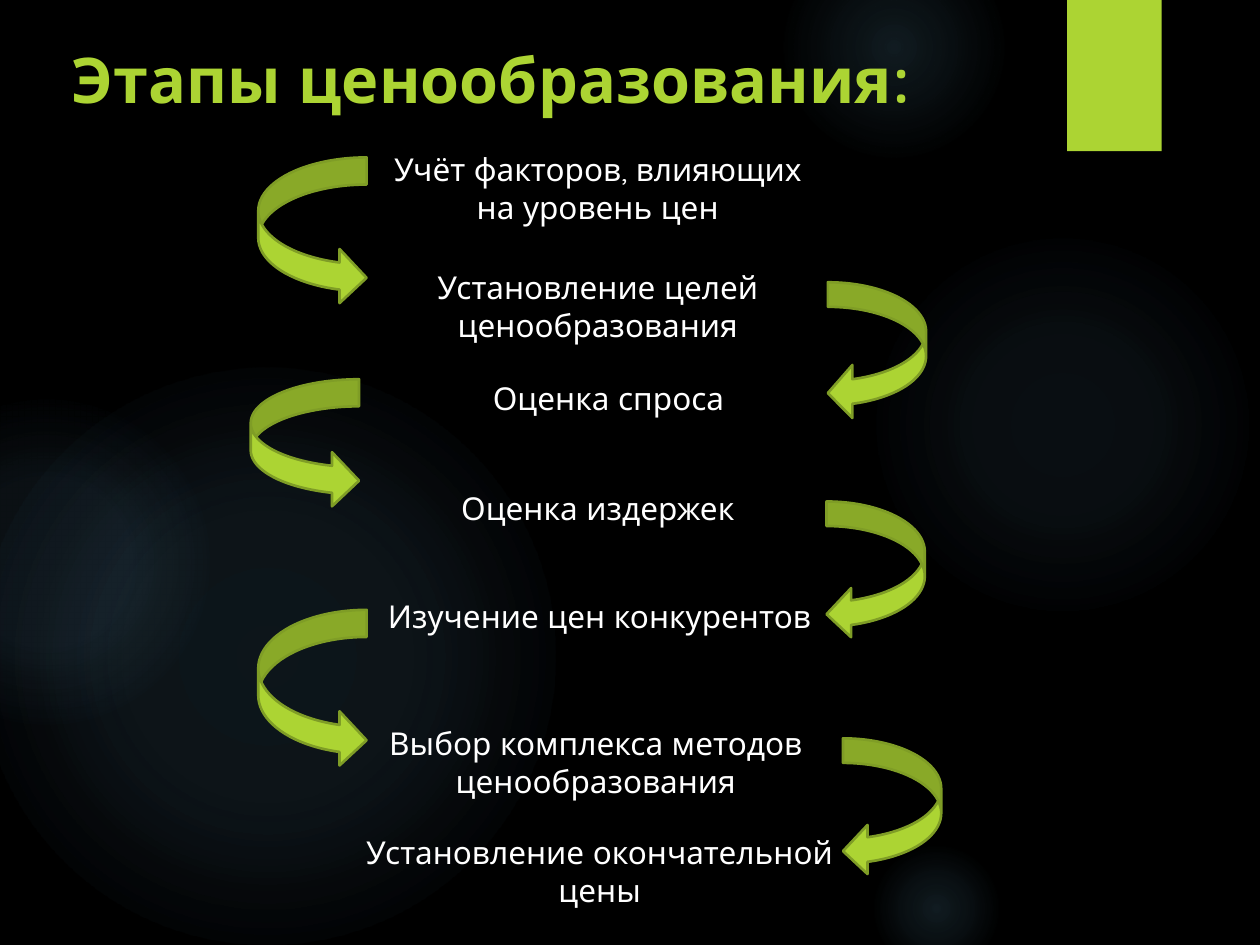
from lxml import etree
from pptx import Presentation
from pptx.dml.color import RGBColor
from pptx.enum.shapes import MSO_SHAPE as Shape
from pptx.enum.text import MSO_ANCHOR as Anchor, MSO_AUTO_SIZE as AutoSize, PP_ALIGN as Align
from pptx.oxml import parse_xml
from pptx.oxml.ns import nsdecls, qn
from pptx.util import Inches, Pt

COLORS = {"back": "000000", "lime": "ACD433", "edge": "7F9D26", "text": "FFFFFF", "glow": "7AC4F0"}
FONT = "Quicksand"

GLOWS = [
    (6.89, 1.83, 3.08, ((0, 7), (36, 6), (69, 0))),
    (6.22, -0.5, 1.75, ((0, 14), (36, 7), (73, 0))),
    (6.89, 6.67, 1.08, ((0, 14), (36, 7), (66, 0))),
    (-0.17, 2.92, 4.58, ((0, 11), (36, 10), (75, 0))),
    (-0.92, 3.17, 2.58, ((0, 8), (36, 8), (72, 0))),
]
STEPS = [
    ("Учёт факторов, влияющих на уровень цен", 2.92, 1.14, 3.65, 0.71),
    ("Установление целей ценообразования", 2.92, 2.08, 3.65, 0.71),
    ("Оценка спроса", 3.09, 2.96, 3.48, 0.4),
    ("Оценка издержек", 2.92, 3.83, 3.65, 0.4),
    ("Изучение цен конкурентов", 2.73, 4.69, 4.06, 0.4),
    ("Выбор комплекса методов ценообразования", 2.66, 5.7, 4.14, 0.71),
    ("Установление окончательной цены", 2.73, 6.56, 4.06, 0.71),
]
RIGHT_ARROWS = [(2.05, 1.25, 0.86, 1.17), (1.99, 3.01, 0.86, 1.02), (2.05, 4.84, 0.86, 1.25)]
LEFT_ARROWS = [(6.57, 2.24, 0.78, 1.09), (6.69, 5.86, 0.78, 1.09), (6.56, 3.98, 0.78, 1.09)]


def rgb(name):
    """Return the named colour."""
    return RGBColor.from_string(COLORS[name])


def apply(target, values):
    """Set each attribute in values on the target."""
    for name, value in values.items():
        setattr(target, name, value)


def write(frame, text, size, color, frame_format, align, bold=False):
    """Put one formatted line of text in a text frame."""
    apply(frame, {"word_wrap": True, **frame_format})
    para = frame.paragraphs[0]
    para.alignment = align
    span = para.add_run()
    span.text = text
    apply(span.font, {"name": FONT, "size": Pt(size), "bold": bold})
    span.font.color.rgb = rgb(color)


def add_solid(slide, kind, place, edge=None):
    """Add a lime shape, outlined when an edge colour is named."""
    shape = slide.shapes.add_shape(kind, *map(Inches, place))
    shape.shadow.inherit = False
    shape.fill.solid()
    shape.fill.fore_color.rgb = rgb("lime")
    if edge:
        shape.line.color.rgb = rgb(edge)
        shape.line.width = Pt(1.5)
    else:
        shape.line.fill.background()
    return shape


def add_glow(slide, left, top, size, stops):
    """Add a circle that fades out from its centre."""
    glow = add_solid(slide, Shape.OVAL, (left, top, size, size))
    fill = parse_xml(f'<a:gradFill {nsdecls("a")}><a:gsLst/><a:path path="circle">'
                     '<a:fillToRect l="50000" t="50000" r="50000" b="50000"/></a:path></a:gradFill>')
    for position, opacity in stops:
        stop = etree.SubElement(fill[0], qn("a:gs"), pos=str(position * 1000))
        color = etree.SubElement(stop, qn("a:srgbClr"), val=COLORS["glow"])
        etree.SubElement(color, qn("a:alpha"), val=str(opacity * 1000))
    properties = glow._element.spPr
    properties.replace(properties.find(qn("a:solidFill")), fill)


def add_title(slide, text):
    """Fill the title placeholder and bring it in front of the glows."""
    title = slide.shapes.title
    apply(title, {"left": Inches(0.47), "top": Inches(0.23), "width": Inches(9), "height": Inches(0.78)})
    frame_format = {"vertical_anchor": Anchor.MIDDLE, "auto_size": AutoSize.NONE}
    write(title.text_frame, text, 36, "lime", frame_format, Align.LEFT, bold=True)
    slide.shapes._spTree.append(title._element)


def add_step(slide, text, *place):
    """Add the centred name of one pricing step."""
    box = slide.shapes.add_textbox(*map(Inches, place))
    frame_format = {"auto_size": AutoSize.SHAPE_TO_FIT_TEXT}
    write(box.text_frame, text, 18, "text", frame_format, Align.CENTER)


def main():
    """Build the pricing steps slide."""
    deck = Presentation()
    apply(deck, {"slide_width": Inches(10), "slide_height": Inches(7.5)})
    slide = deck.slides.add_slide(deck.slide_layouts[5])
    slide.background.fill.solid()
    slide.background.fill.fore_color.rgb = rgb("back")
    for glow in GLOWS:
        add_glow(slide, *glow)
    add_solid(slide, Shape.RECTANGLE, (8.47, 0, 0.75, 1.2))
    add_title(slide, "Этапы ценообразования:")
    for step in STEPS:
        add_step(slide, *step)
    for place in RIGHT_ARROWS:
        add_solid(slide, Shape.CURVED_RIGHT_ARROW, place, "edge")
    left_arrows = [add_solid(slide, Shape.CURVED_LEFT_ARROW, place, "edge") for place in LEFT_ARROWS]
    left_arrows[0].adjustments[1] = 0.54
    deck.save("out.pptx")


if __name__ == "__main__":
    main()
